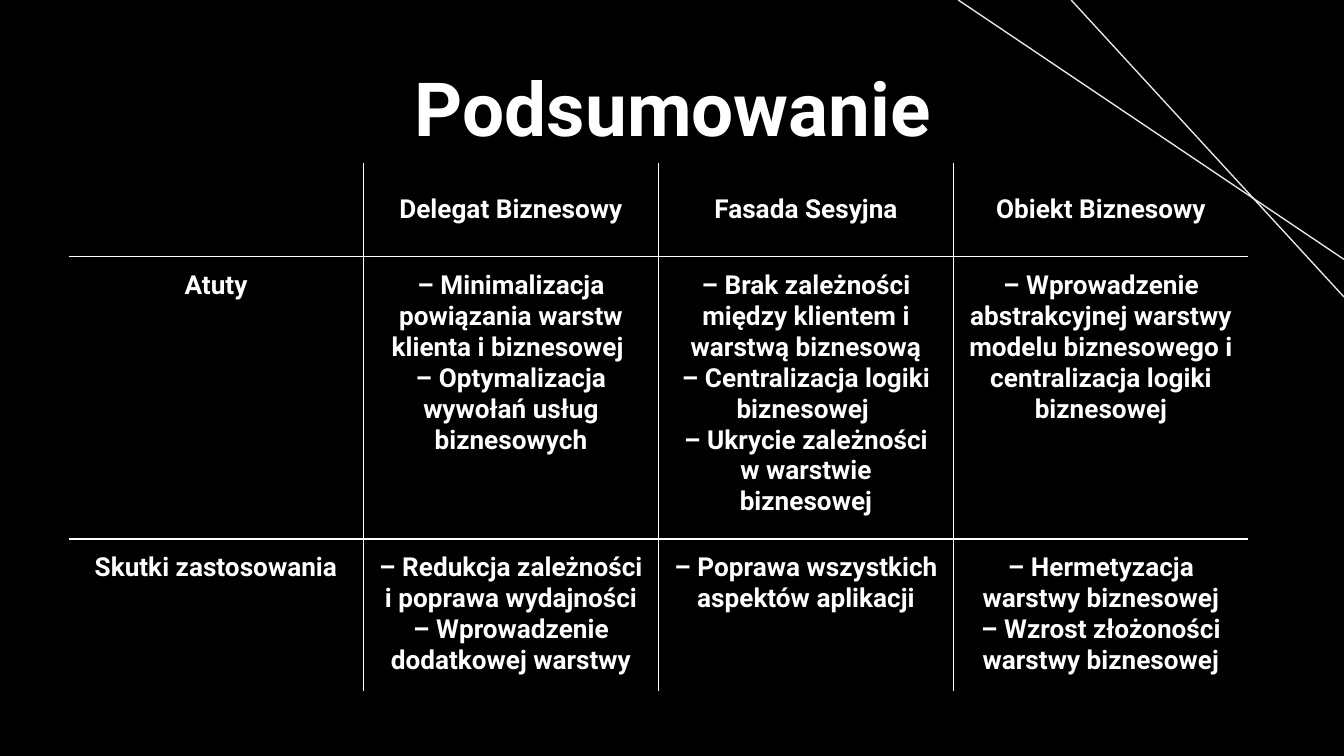
"""Build the summary slide comparing three business-layer patterns."""
from dataclasses import dataclass

from lxml.etree import SubElement
from pptx import Presentation
from pptx.dml.color import RGBColor
from pptx.enum.shapes import MSO_CONNECTOR
from pptx.enum.text import MSO_ANCHOR, PP_ALIGN
from pptx.oxml.ns import qn
from pptx.util import Inches, Pt


@dataclass(frozen=True)
class Theme:
    background: str = "000000"
    text: str = "FFFFFF"
    accent: str = "E9E6DF"
    font: str = "Roboto"
    title_size: int = 40
    table_size: int = 14
    line_width: float = 0.75


theme = Theme()


def format_text(text_frame, size):
    for paragraph in text_frame.paragraphs:
        paragraph.alignment = PP_ALIGN.CENTER
        for run in paragraph.runs:
            run.font.name = theme.font
            run.font.size = Pt(size)
            run.font.bold = True
            run.font.color.rgb = RGBColor.from_string(theme.text)


def add_border(cell, side, visible):
    properties = cell._tc.get_or_add_tcPr()
    border = SubElement(properties, qn(f"a:ln{side}"), w=str(Pt(theme.line_width)))
    if visible:
        fill = SubElement(border, qn("a:solidFill"))
        SubElement(fill, qn("a:srgbClr"), val=theme.text)
    else:
        SubElement(border, qn("a:noFill"))


presentation = Presentation()
presentation.slide_width = Inches(10)
presentation.slide_height = Inches(10) * 9 // 16
slide = presentation.slides.add_slide(presentation.slide_layouts[5])
slide.background.fill.solid()
slide.background.fill.fore_color.rgb = RGBColor.from_string(theme.background)

for start_x, end_y in [(7.13, 1.93), (7.97, 2.21)]:
    connector = slide.shapes.add_connector(
        MSO_CONNECTOR.STRAIGHT, Inches(start_x), 0, Inches(10), Inches(end_y)
    )
    connector.line.color.rgb = RGBColor.from_string(theme.accent)
    connector.line.width = Pt(theme.line_width)
    SubElement(connector._element.spPr, qn("a:effectLst"))

title = slide.shapes.title
title.left, title.top = Inches(1.55), Inches(0.29)
title.width, title.height = Inches(6.91), Inches(1.09)
title_frame = title.text_frame
title_frame.text = "Podsumowanie"
title_frame.word_wrap = True
title_frame.vertical_anchor = MSO_ANCHOR.MIDDLE
title_frame.margin_left = title_frame.margin_right = Inches(0.07)
title_frame.margin_top = title_frame.margin_bottom = Inches(0.04)
title_frame.paragraphs[0].line_spacing = 0.9
format_text(title_frame, theme.title_size)

rows = [
    ["", "Delegat Biznesowy", "Fasada Sesyjna", "Obiekt Biznesowy"],
    [
        "Atuty",
        "– Minimalizacja powiązania warstw klienta i biznesowej \n"
        "– Optymalizacja wywołań usług biznesowych",
        "– Brak zależności między klientem i warstwą biznesową\n"
        "– Centralizacja logiki biznesowej \n"
        "– Ukrycie zależności w warstwie biznesowej",
        "– Wprowadzenie abstrakcyjnej warstwy modelu biznesowego "
        "i centralizacja logiki biznesowej",
    ],
    [
        "Skutki zastosowania",
        "– Redukcja zależności i poprawa wydajności\n"
        "– Wprowadzenie dodatkowej warstwy",
        "– Poprawa wszystkich aspektów aplikacji",
        "– Hermetyzacja warstwy biznesowej\n"
        "– Wzrost złożoności warstwy biznesowej",
    ],
]
row_heights = [0.7, 2.1, 1.13]
table_width = Inches(8.78)
last_row, last_column = len(rows) - 1, len(rows[0]) - 1

table = slide.shapes.add_table(
    len(rows), len(rows[0]), Inches(0.51), Inches(1.21),
    table_width, Inches(sum(row_heights)),
).table
table.first_row = False
table.horz_banding = False
for column in table.columns:
    column.width = table_width // len(rows[0])

for row_index, (texts, height) in enumerate(zip(rows, row_heights)):
    table.rows[row_index].height = Inches(height)
    for column_index, text in enumerate(texts):
        cell = table.cell(row_index, column_index)
        cell.text_frame.text = text
        format_text(cell.text_frame, theme.table_size)
        cell.vertical_anchor = MSO_ANCHOR.TOP if row_index else MSO_ANCHOR.MIDDLE
        cell.margin_left = cell.margin_right = Inches(0.1)
        cell.margin_top = cell.margin_bottom = Inches(0.1)
        add_border(cell, "L", column_index > 0)
        add_border(cell, "R", column_index < last_column)
        add_border(cell, "T", row_index > 0)
        add_border(cell, "B", row_index < last_row)
        cell.fill.background()

presentation.save("out.pptx")
